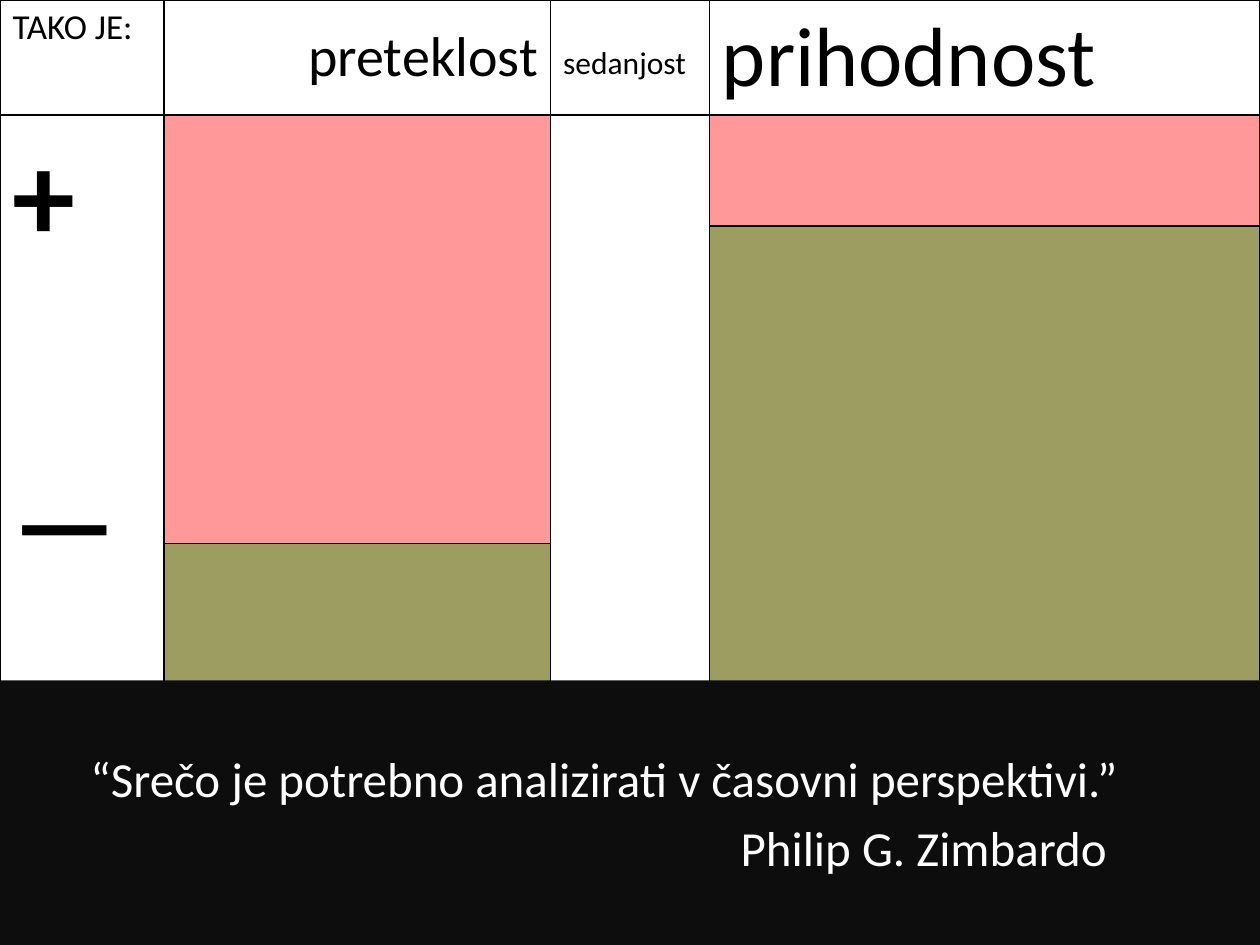
from lxml.etree import SubElement
from pptx import Presentation
from pptx.dml.color import RGBColor
from pptx.enum.shapes import MSO_SHAPE
from pptx.enum.text import MSO_ANCHOR, PP_ALIGN
from pptx.oxml.ns import qn
from pptx.util import Inches, Pt

HUES = {"ink": "000000", "page": "FFFFFF", "pink": "FF9999",
        "olive": "9D9D61", "dark": "0D0D0D"}
COLS = [1.3, 3.07, 1.26, 4.37]
ROWS = [0.91, 0.88, 2.52, 4.01]
WIDE, HIGH = 10, 7.5
FILLS = ["page page page page", "page pink page pink",
         "page pink page olive", "page olive page olive"]
SPANS = [((1, 0), (3, 0)), ((1, 1), (2, 1)), ((1, 2), (3, 2)), ((2, 3), (3, 3))]


def hue(name):
    """Return the named colour."""
    return RGBColor.from_string(HUES[name])


def paint(item, name):
    """Give a shape or cell a plain fill."""
    item.fill.solid()
    item.fill.fore_color.rgb = hue(name)


def write(par, text, size, color="ink", bold=False):
    """Add one styled run to a paragraph."""
    run = par.add_run()
    run.text = text
    run.font.name = "Calibri"
    run.font.size = Pt(size)
    run.font.bold = bold
    run.font.color.rgb = hue(color)


def edge(cell):
    """Draw a thin line on all four sides of a cell."""
    props = cell._tc.get_or_add_tcPr()
    for side in ("lnL", "lnR", "lnT", "lnB"):
        line = SubElement(props, qn(f"a:{side}"), w=str(Pt(1)))
        fill = SubElement(line, qn("a:solidFill"))
        SubElement(fill, qn("a:srgbClr"), val=HUES["ink"])


def grid(slide):
    """Add the table with its sizes, fills, lines and merged cells."""
    table = slide.shapes.add_table(
        len(ROWS), len(COLS), 0, 0, Inches(WIDE), Inches(sum(ROWS))).table
    table.first_row = table.horz_banding = False
    for col, width in zip(table.columns, COLS):
        col.width = Inches(width)
    for row, high, names in zip(table.rows, ROWS, FILLS):
        row.height = Inches(high)
        for cell, name in zip(row.cells, names.split()):
            edge(cell)
            paint(cell, name)
    for start, end in SPANS:
        table.cell(*start).merge(table.cell(*end))
    return table


def label(table):
    """Write the column heads and the plus and minus signs."""
    heads = [("TAKO JE:", 20), ("preteklost", 32), ("sedanjost", 18), ("prihodnost", 48)]
    for col, (text, size) in enumerate(heads):
        write(table.cell(0, col).text_frame.paragraphs[0], text, size)
    past, now = table.cell(0, 1), table.cell(0, 2)
    past.vertical_anchor = MSO_ANCHOR.MIDDLE
    past.text_frame.paragraphs[0].alignment = PP_ALIGN.RIGHT
    now.margin_top = Inches(0.35)
    signs = table.cell(1, 0).text_frame
    write(signs.paragraphs[0], "+", 72, bold=True)
    minus = signs.add_paragraph()
    minus.space_before = Pt(102)
    write(minus, "—", 66, bold=True)


def quote(slide):
    """Add the dark band with the quotation and its author."""
    top = HIGH * 0.72
    band = slide.shapes.add_shape(
        MSO_SHAPE.RECTANGLE, 0, Inches(top), Inches(WIDE), Inches(HIGH - top))
    band.shadow.inherit = False
    band.line.fill.background()
    paint(band, "dark")
    frame = band.text_frame
    frame.word_wrap = True
    frame.vertical_anchor = MSO_ANCHOR.MIDDLE
    lines = [("“Srečo je potrebno analizirati v časovni perspektivi.”", 0.62),
             ("Philip G. Zimbardo", 5.78)]
    for place, (text, left) in enumerate(lines):
        par = frame.add_paragraph() if place else frame.paragraphs[0]
        par.alignment = PP_ALIGN.LEFT
        par.space_before = Pt(5.6)
        par._p.get_or_add_pPr().set("marL", str(Inches(left)))
        write(par, text, 28, "page")


def main():
    """Build and save the slide."""
    deck = Presentation()
    deck.slide_width, deck.slide_height = Inches(WIDE), Inches(HIGH)
    slide = deck.slides.add_slide(deck.slide_layouts[6])
    label(grid(slide))
    quote(slide)
    deck.save("out.pptx")


if __name__ == "__main__":
    main()
